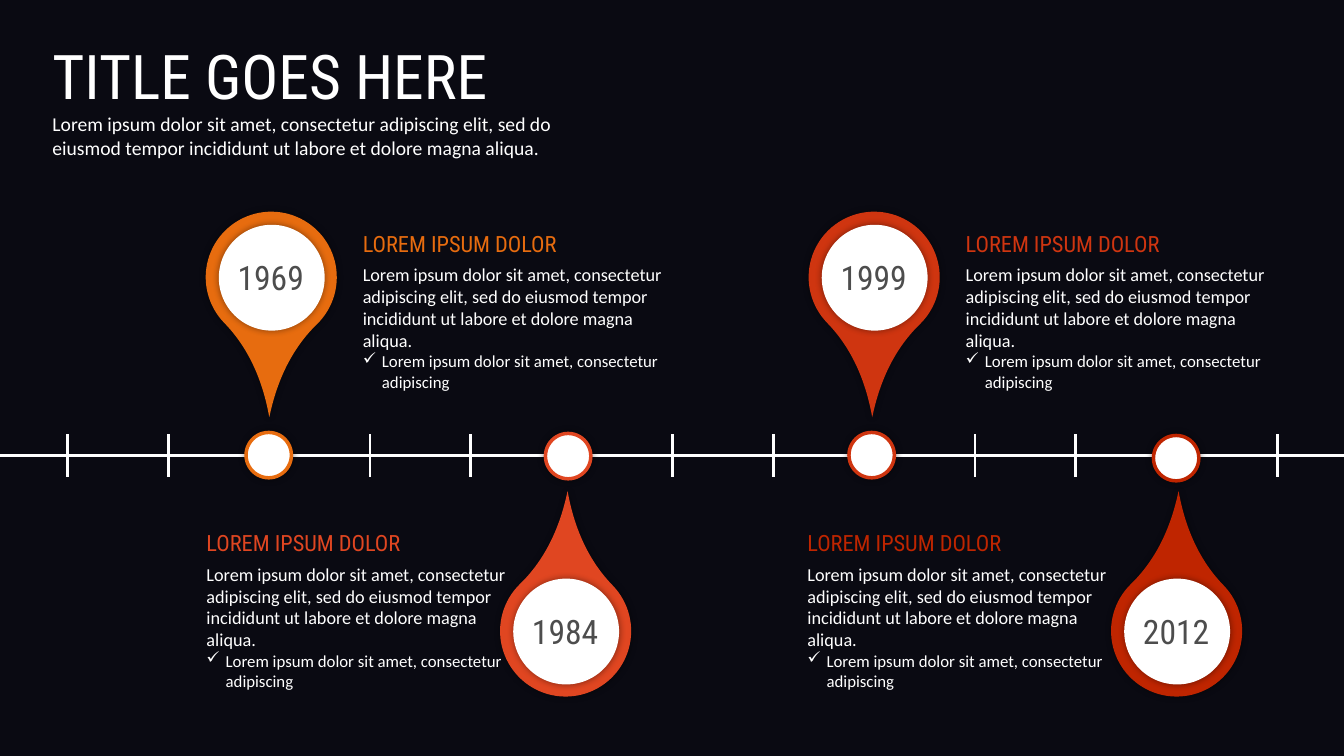
from lxml import etree
from pptx import Presentation
from pptx.dml.color import RGBColor
from pptx.enum.shapes import MSO_CONNECTOR, MSO_SHAPE
from pptx.enum.text import MSO_ANCHOR, MSO_AUTO_SIZE, PP_ALIGN
from pptx.oxml.ns import qn
from pptx.util import Inches, Pt

OVAL, TEARDROP = MSO_SHAPE.OVAL, MSO_SHAPE.TEAR
STRAIGHT = MSO_CONNECTOR.STRAIGHT
TOP = MSO_ANCHOR.TOP
NO_AUTOFIT = MSO_AUTO_SIZE.NONE
LEFT, CENTER = PP_ALIGN.LEFT, PP_ALIGN.CENTER

COLORS = {
    "night": "0A0A12", "white": "FFFFFF", "year": "4D4D4D", "shadow": "000000",
    "orange": "E76C0F", "coral": "E04621", "red": "CF3510", "crimson": "BF2500",
}
HEADING_FONT, BODY_FONT = "Roboto Condensed", "Calibri"
LOREM_START = "Lorem ipsum dolor sit amet, consectetur adipiscing"
LOREM = LOREM_START + " elit, sed do eiusmod tempor incididunt ut labore et dolore magna aliqua."

# year, color, pin left, pin top, pin rotation, text left, text top, dot left, dot top
MILESTONES = [
    ("1969", "orange", 2.04, 2.1, 135.8, 3.5, 2.23, 2.44, 4.29),
    ("1999", "red", 8.02, 2.1, 135.8, 9.48, 2.23, 8.02 + 0.4, 4.29),
    ("1984", "coral", 4.96, 5.61, 315.8, 1.95, 5.2, 5.41, 4.3),
    ("2012", "crimson", 11.02, 5.61, 315.8, 7.91, 5.2, 11.44, 4.32),
]


def add_glowing_shape(shapes, kind, left, top, size, color, outline=None):
    """Add a square-bounded shape with a soft, centred shadow."""
    shape = shapes.add_shape(kind, Inches(left), Inches(top), Inches(size), Inches(size))
    shape.fill.solid()
    shape.fill.fore_color.rgb = RGBColor.from_string(COLORS[color])
    if outline:
        shape.line.color.rgb = RGBColor.from_string(COLORS[outline])
        shape.line.width = Pt(2.5)
    else:
        shape.line.fill.background()
    shape.shadow.inherit = False
    effects = shape._element.spPr.find(qn("a:effectLst"))
    shadow = etree.SubElement(effects, qn("a:outerShdw"), blurRad=str(Pt(5)),
                              dist="0", dir="0", algn="ctr", rotWithShape="0")
    shade = etree.SubElement(shadow, qn("a:srgbClr"), val=COLORS["shadow"])
    etree.SubElement(shade, qn("a:alpha"), val="40000")
    return shape


def write_span(para, text, size, font, color):
    span = para.add_run()
    span.text = text
    span.font.size = Pt(size)
    span.font.name = font
    span.font.color.rgb = RGBColor.from_string(COLORS[color])


deck = Presentation()
deck.slide_width, deck.slide_height = Inches(13.33), Inches(7.5)
page = deck.slides.add_slide(deck.slide_layouts[5])
page.background.fill.solid()
page.background.fill.fore_color.rgb = RGBColor.from_string(COLORS["night"])

# Title and introduction
title = page.shapes.title
title.left, title.top = Inches(0.42), Inches(0.33)
title.width, title.height = Inches(5.81), Inches(1.31)
frame = title.text_frame
frame.word_wrap = True
frame.auto_size = NO_AUTOFIT
frame.vertical_anchor = TOP
para = frame.paragraphs[0]
para.alignment = LEFT
write_span(para, "TITLE GOES HERE", 44, HEADING_FONT, "white")
para = frame.add_paragraph()
para.alignment = LEFT
para.space_before = Pt(0)
write_span(para, LOREM, 14, BODY_FONT, "white")

# Time axis with one tick per inch
axis = [(0, 4.52, 13.33, 4.52)]
ticks = [(0.67 + step, 4.31, 0.67 + step, 4.73) for step in range(13)]
for ends in axis + ticks:
    line = page.shapes.add_connector(STRAIGHT, *[Inches(end) for end in ends])
    line.line.color.rgb = RGBColor.from_string(COLORS["white"])
    line.line.width = Pt(2)
    etree.SubElement(line._element.spPr, qn("a:effectLst"))

# Milestones: pin, description and dot on the axis
for (year, color, pin_left, pin_top, rotation,
     text_left, text_top, dot_left, dot_top) in MILESTONES:
    pin = page.shapes.add_group_shape()
    drop = add_glowing_shape(pin.shapes, TEARDROP, pin_left, pin_top, 1.3, color)
    drop.adjustments[0] = 1.511
    drop.rotation = rotation
    disc = add_glowing_shape(pin.shapes, OVAL, pin_left + 0.13, pin_top + 0.13, 1.05, "white")
    if year == "1969":
        disc.shadow.inherit = False
    label = pin.shapes.add_textbox(Inches(pin_left + 0.25), Inches(pin_top + 0.45),
                                   Inches(0.79), Inches(0.4))
    frame = label.text_frame
    frame.word_wrap = True
    frame.margin_left = frame.margin_right = frame.margin_top = frame.margin_bottom = 0
    para = frame.paragraphs[0]
    para.alignment = CENTER
    write_span(para, year, 24, HEADING_FONT, "year")

    box = page.shapes.add_textbox(Inches(text_left), Inches(text_top),
                                  Inches(3.17), Inches(1.72))
    frame = box.text_frame
    frame.word_wrap = True
    para = frame.paragraphs[0]
    para.space_after = Pt(5)
    write_span(para, "LOREM IPSUM DOLOR", 16, HEADING_FONT, color)
    write_span(frame.add_paragraph(), LOREM, 13, BODY_FONT, "white")
    para = frame.add_paragraph()
    properties = para._p.get_or_add_pPr()
    properties.set("marL", str(Inches(0.19)))
    properties.set("indent", str(-Inches(0.19)))
    etree.SubElement(properties, qn("a:buChar"), char="✓")
    write_span(para, LOREM_START, 12, BODY_FONT, "white")

    add_glowing_shape(page.shapes, OVAL, dot_left, dot_top, 0.45, "white", outline=color)

deck.save("out.pptx")
